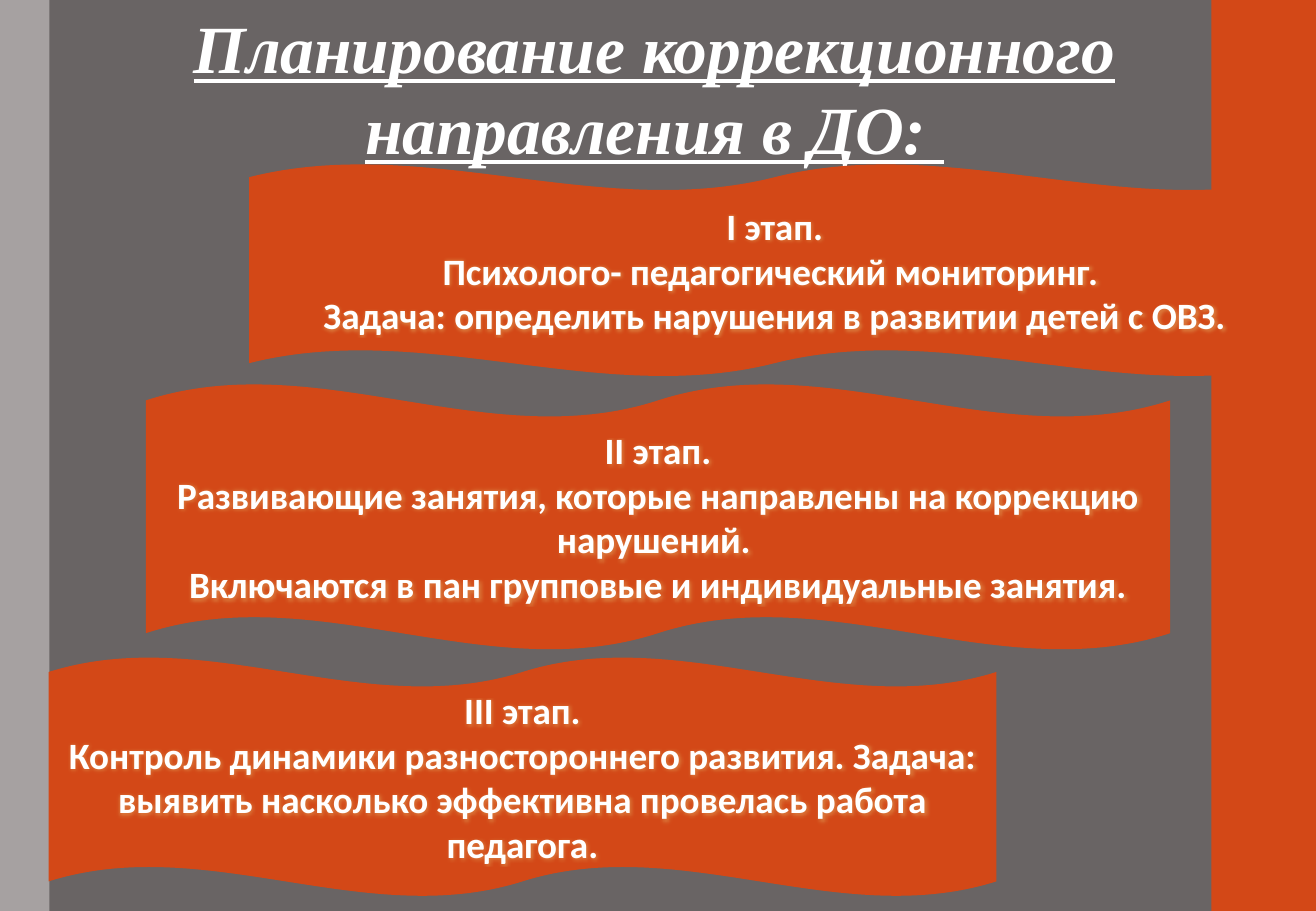
from dataclasses import dataclass

import lxml.etree
import pptx
import pptx.dml.color
import pptx.enum.shapes
import pptx.enum.text
import pptx.oxml.ns
import pptx.util

SHAPES = pptx.enum.shapes.MSO_SHAPE


@dataclass(frozen=True)
class Theme:
    background: str = "696464"
    accent: str = "D34817"
    side: str = "A6A1A1"
    text: str = "FFFFFF"
    glow: str = "E6C070"
    title_font: str = "Times New Roman"
    body_font: str = "Calibri"
    title_size: int = 40
    body_size: int = 22


class StageSlide:
    def __init__(self, deck, theme):
        self.deck = deck
        self.theme = theme
        self.slide = deck.slides.add_slide(deck.slide_layouts[5])
        fill = self.slide.background.fill
        fill.solid()
        fill.fore_color.rgb = self.color(theme.background)

    def color(self, value):
        return pptx.dml.color.RGBColor.from_string(value)

    def area(self, left, top, width, height):
        across = self.deck.slide_width / 100
        down = self.deck.slide_height / 100
        return [round(v) for v in (left * across, top * down, width * across, height * down)]

    def add_words(self, paragraph, text, font_name, size):
        paragraph.alignment = pptx.enum.text.PP_ALIGN.CENTER
        run = paragraph.add_run()
        run.text = text
        run.font.name = font_name
        run.font.size = pptx.util.Pt(size)
        run.font.bold = True
        run.font.color.rgb = self.color(self.theme.text)
        return run

    def glow(self, run):
        qn = pptx.oxml.ns.qn
        effects = lxml.etree.Element(qn("a:effectLst"))
        halo = lxml.etree.SubElement(effects, qn("a:glow"), rad=str(int(pptx.util.Pt(4))))
        tint = lxml.etree.SubElement(halo, qn("a:srgbClr"), val=self.theme.glow)
        lxml.etree.SubElement(tint, qn("a:alpha"), val="40000")
        run._r.rPr.find(qn("a:solidFill")).addnext(effects)

    def title(self, text, *place):
        heading = self.slide.shapes.title
        heading.left, heading.top, heading.width, heading.height = self.area(*place)
        frame = heading.text_frame
        frame.word_wrap = True
        frame.auto_size = pptx.enum.text.MSO_AUTO_SIZE.NONE
        frame.vertical_anchor = pptx.enum.text.MSO_ANCHOR.TOP
        run = self.add_words(frame.paragraphs[0], text, self.theme.title_font, self.theme.title_size)
        run.font.italic = True
        run.font.underline = True

    def block(self, kind, color, *place):
        block = self.slide.shapes.add_shape(kind, *self.area(*place))
        block.shadow.inherit = False
        block.fill.solid()
        block.fill.fore_color.rgb = self.color(color)
        block.line.fill.background()
        return block

    def stage(self, lines, *place):
        wave = self.block(SHAPES.DOUBLE_WAVE, self.theme.accent, *place)
        frame = wave.text_frame
        frame.word_wrap = True
        frame.vertical_anchor = pptx.enum.text.MSO_ANCHOR.MIDDLE
        for index, line in enumerate(lines):
            paragraph = frame.add_paragraph() if index else frame.paragraphs[0]
            self.glow(self.add_words(paragraph, line, self.theme.body_font, self.theme.body_size))


def main():
    deck = pptx.Presentation()
    deck.slide_width = pptx.util.Inches(10.83)
    deck.slide_height = pptx.util.Inches(7.5)
    theme = Theme()
    plan = StageSlide(deck, theme)

    plan.block(SHAPES.RECTANGLE, theme.accent, 92.06, 0, 7.94, 100)
    plan.block(SHAPES.RECTANGLE, theme.side, 0, 0, 3.75, 100)
    plan.title("Планирование коррекционного направления в ДО: ", 3.23, 0, 92.98, 19.33)

    stages = [
        (["I этап.",
          "Психолого- педагогический мониторинг. ",
          "Задача: определить нарушения в развитии детей с ОВЗ."],
         (18.93, 18, 79.87, 23.33)),
        (["II этап.",
          "Развивающие занятия, которые направлены на коррекцию нарушений. ",
          "Включаются в пан групповые и индивидуальные занятия."],
         (11.08, 42.13, 77.84, 29.2)),
        (["III этап.",
          "Контроль динамики разностороннего развития. Задача: выявить насколько "
          "эффективна провелась работа педагога."],
         (3.69, 72.13, 72.02, 26.27)),
    ]
    for lines, place in stages:
        plan.stage(lines, *place)

    deck.save("out.pptx")


if __name__ == "__main__":
    main()
